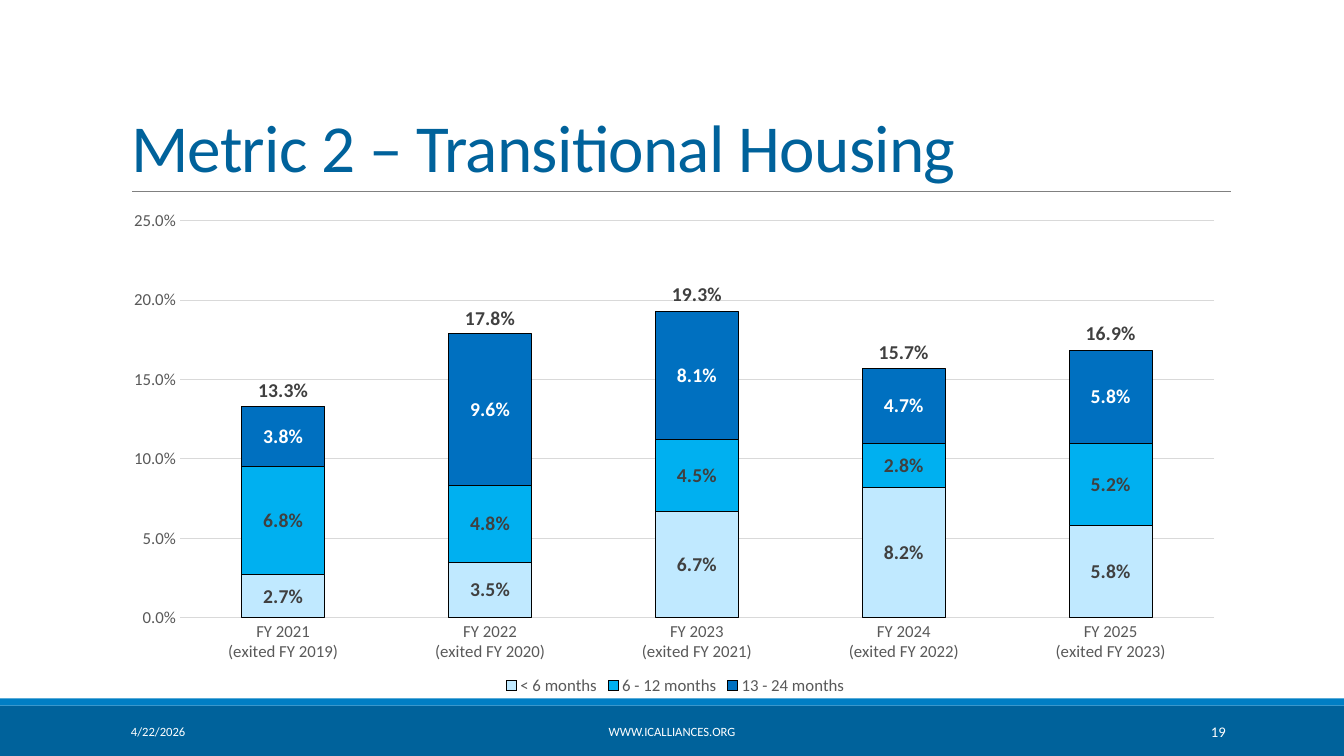
import dataclasses
from typing import Any

import pptx
import pptx.chart.data
import pptx.dml.color
import pptx.enum.chart
import pptx.enum.shapes
import pptx.enum.text
import pptx.oxml
import pptx.oxml.ns
import pptx.util

Cm = pptx.util.Cm
Align = pptx.enum.text.PP_ALIGN
COLOURS = {
    "navy": "00629B", "stripe": "007EC4", "rule": "808080", "white": "FFFFFF",
    "grid": "D9D9D9", "axis": "595959", "label": "404040", "outline": "000000",
    "short": "C0E9FF", "medium": "00B0F0", "long": "0070C0",
}
FONT = "Calibri"
CHART_NS = pptx.oxml.ns.nsdecls("c")
qn = pptx.oxml.ns.qn


@dataclasses.dataclass
class Band:
    top: float
    height: float
    colour: str


@dataclasses.dataclass
class FooterItem:
    text: str
    left: float
    width: float
    size: float
    align: Any


@dataclasses.dataclass
class Stay:
    name: str
    values: list[float]
    colour: str
    label_colour: str


BANDS = [Band(17.78, 1.27, "navy"), Band(17.6, 0.18, "stripe")]
FOOTER = [
    FooterItem("4/22/2026", 3.05, 6.86, 9, Align.LEFT),
    FooterItem("WWW.ICALLIANCES.ORG", 10.24, 13.39, 9, Align.CENTER),
    FooterItem("19", 27.51, 3.63, 10.5, Align.RIGHT),
]
STAYS = [
    Stay("< 6 months", [0.027, 0.035, 0.067, 0.082, 0.058], "short", "label"),
    Stay("6 - 12 months", [0.068, 0.048, 0.045, 0.028, 0.052], "medium", "label"),
    Stay("13 - 24 months", [0.038, 0.096, 0.081, 0.047, 0.058], "long", "white"),
]
TOTALS = [0.133, 0.178, 0.193, 0.157, 0.169]


def set_all(target: Any, values: dict[str, Any]) -> None:
    for name, value in values.items():
        setattr(target, name, value)


def rgb(colour: str) -> pptx.dml.color.RGBColor:
    return pptx.dml.color.RGBColor.from_string(COLOURS[colour])


def style_font(font: Any, size: float, colour: str, bold: bool = False) -> None:
    set_all(font, {"name": FONT, "size": pptx.util.Pt(size), "bold": bold})
    font.color.rgb = rgb(colour)


def style_line(line: Any, colour: str, width: float) -> None:
    line.color.rgb = rgb(colour)
    line.width = pptx.util.Pt(width)


def draw_band(page: Any, band: Band) -> None:
    shape = page.shapes.add_shape(
        pptx.enum.shapes.MSO_SHAPE.RECTANGLE,
        0, Cm(band.top), Cm(33.87), Cm(band.height))
    shape.shadow.inherit = False
    shape.fill.solid()
    shape.fill.fore_color.rgb = rgb(band.colour)
    shape.line.fill.background()


def draw_rule(page: Any) -> None:
    rule = page.shapes.add_connector(
        pptx.enum.shapes.MSO_CONNECTOR.STRAIGHT,
        Cm(3.33), Cm(4.83), Cm(31.01), Cm(4.83))
    style_line(rule.line, "rule", 0.5)
    rule._element.spPr.append(pptx.oxml.parse_xml(
        f'<a:effectLst {pptx.oxml.ns.nsdecls("a")}/>'))


def draw_title(page: Any, text: str) -> None:
    title = page.shapes.title
    set_all(title, {"left": Cm(3.05), "top": Cm(0.79),
                    "width": Cm(27.94), "height": Cm(4.04)})
    set_all(title.text_frame, {
        "word_wrap": True, "auto_size": pptx.enum.text.MSO_AUTO_SIZE.NONE,
        "vertical_anchor": pptx.enum.text.MSO_ANCHOR.BOTTOM})
    para = title.text_frame.paragraphs[0]
    set_all(para, {"alignment": Align.LEFT, "line_spacing": 0.85})
    span = para.add_run()
    span.text = text
    style_font(span.font, 48, "navy")
    span._r.get_or_add_rPr().set("spc", "-50")


def draw_footer_item(page: Any, item: FooterItem) -> None:
    box = page.shapes.add_textbox(
        Cm(item.left), Cm(17.93), Cm(item.width), Cm(1.02))
    set_all(box.text_frame, {
        "word_wrap": True, "vertical_anchor": pptx.enum.text.MSO_ANCHOR.MIDDLE})
    para = box.text_frame.paragraphs[0]
    para.alignment = item.align
    span = para.add_run()
    span.text = item.text
    style_font(span.font, item.size, "white")


def style_labels(series: Any, colour: str, position: Any) -> None:
    labels = series.data_labels
    set_all(labels, {"show_value": True, "number_format": "0.0%",
                     "number_format_is_linked": False, "position": position})
    style_font(labels.font, 14, colour, bold=True)


def style_axes(chart: Any) -> None:
    for axis in (chart.category_axis, chart.value_axis):
        axis.major_tick_mark = pptx.enum.chart.XL_TICK_MARK.NONE
        style_font(axis.tick_labels.font, 12, "axis")
    style_line(chart.category_axis.format.line, "grid", 0.75)
    values = chart.value_axis
    set_all(values, {"minimum_scale": 0, "maximum_scale": 0.25,
                     "major_unit": 0.05, "has_major_gridlines": True})
    set_all(values.tick_labels, {"number_format": "0.0%",
                                 "number_format_is_linked": False})
    values.format.line.fill.background()
    style_line(values.major_gridlines.format.line, "grid", 0.75)


def move_totals_to_line(chart: Any) -> None:
    """Turn the last bar series into a line that only carries labels."""
    bars = chart._chartSpace.find(".//" + qn("c:barChart"))
    totals = bars.findall(qn("c:ser"))[-1]
    for bar_only in totals.findall(qn("c:invertIfNegative")):
        totals.remove(bar_only)
    line = pptx.oxml.parse_xml(
        f'<c:lineChart {CHART_NS}><c:grouping val="standard"/>'
        '<c:varyColors val="0"/><c:marker val="1"/></c:lineChart>')
    line.insert(2, totals)
    for axis_id in bars.findall(qn("c:axId")):
        line.append(pptx.oxml.parse_xml(
            f'<c:axId {CHART_NS} val="{axis_id.get("val")}"/>'))
    bars.addnext(line)
    series = chart.plots[1].series[0]
    series.smooth = False
    series.format.line.fill.background()
    series.marker.style = pptx.enum.chart.XL_MARKER_STYLE.NONE
    style_labels(series, "label", pptx.enum.chart.XL_LABEL_POSITION.ABOVE)


def place_plot(chart: Any) -> None:
    area = chart._chartSpace.find(".//" + qn("c:plotArea"))
    for layout in area.findall(qn("c:layout")):
        area.remove(layout)
    settings = {"layoutTarget": "inner", "xMode": "edge", "yMode": "edge",
                "x": 0.053, "y": 0.057, "w": 0.933, "h": 0.782}
    inner = "".join(f'<c:{tag} val="{value}"/>' for tag, value in settings.items())
    area.insert(0, pptx.oxml.parse_xml(
        f"<c:layout {CHART_NS}><c:manualLayout>{inner}</c:manualLayout></c:layout>"))


def add_legend(chart: Any) -> None:
    chart.has_legend = True
    set_all(chart.legend, {
        "position": pptx.enum.chart.XL_LEGEND_POSITION.BOTTOM,
        "include_in_layout": False})
    style_font(chart.legend.font, 12, "axis")
    chart.legend._element.find(qn("c:legendPos")).addnext(pptx.oxml.parse_xml(
        f'<c:legendEntry {CHART_NS}><c:idx val="{len(STAYS)}"/>'
        '<c:delete val="1"/></c:legendEntry>'))


def draw_chart(page: Any) -> None:
    data = pptx.chart.data.CategoryChartData(number_format="0.0%")
    data.categories = [f"FY {year}\n(exited FY {year - 2})"
                       for year in range(2021, 2026)]
    for stay in STAYS:
        data.add_series(stay.name, stay.values)
    data.add_series("Series 4", TOTALS)
    chart = page.shapes.add_chart(
        pptx.enum.chart.XL_CHART_TYPE.COLUMN_STACKED,
        Cm(3.05), Cm(4.83), Cm(27.94), Cm(12.8), data).chart
    chart.has_title = False
    style_font(chart.font, 10, "outline")
    set_all(chart.plots[0], {"gap_width": 150, "overlap": 100,
                             "vary_by_categories": False})
    for stay, series in zip(STAYS, chart.plots[0].series):
        series.format.fill.solid()
        series.format.fill.fore_color.rgb = rgb(stay.colour)
        style_line(series.format.line, "outline", 0.75)
        style_labels(series, stay.label_colour,
                     pptx.enum.chart.XL_LABEL_POSITION.CENTER)
    style_axes(chart)
    move_totals_to_line(chart)
    place_plot(chart)
    add_legend(chart)


def main() -> None:
    deck = pptx.Presentation()
    set_all(deck, {"slide_width": Cm(33.87), "slide_height": Cm(19.05)})
    page = deck.slides.add_slide(deck.slide_layouts[5])
    # Page frame
    for band in BANDS:
        draw_band(page, band)
    draw_rule(page)
    # Content
    draw_title(page, "Metric 2 – Transitional Housing")
    draw_chart(page)
    # Footer
    for item in FOOTER:
        draw_footer_item(page, item)
    deck.save("out.pptx")


if __name__ == "__main__":
    main()
